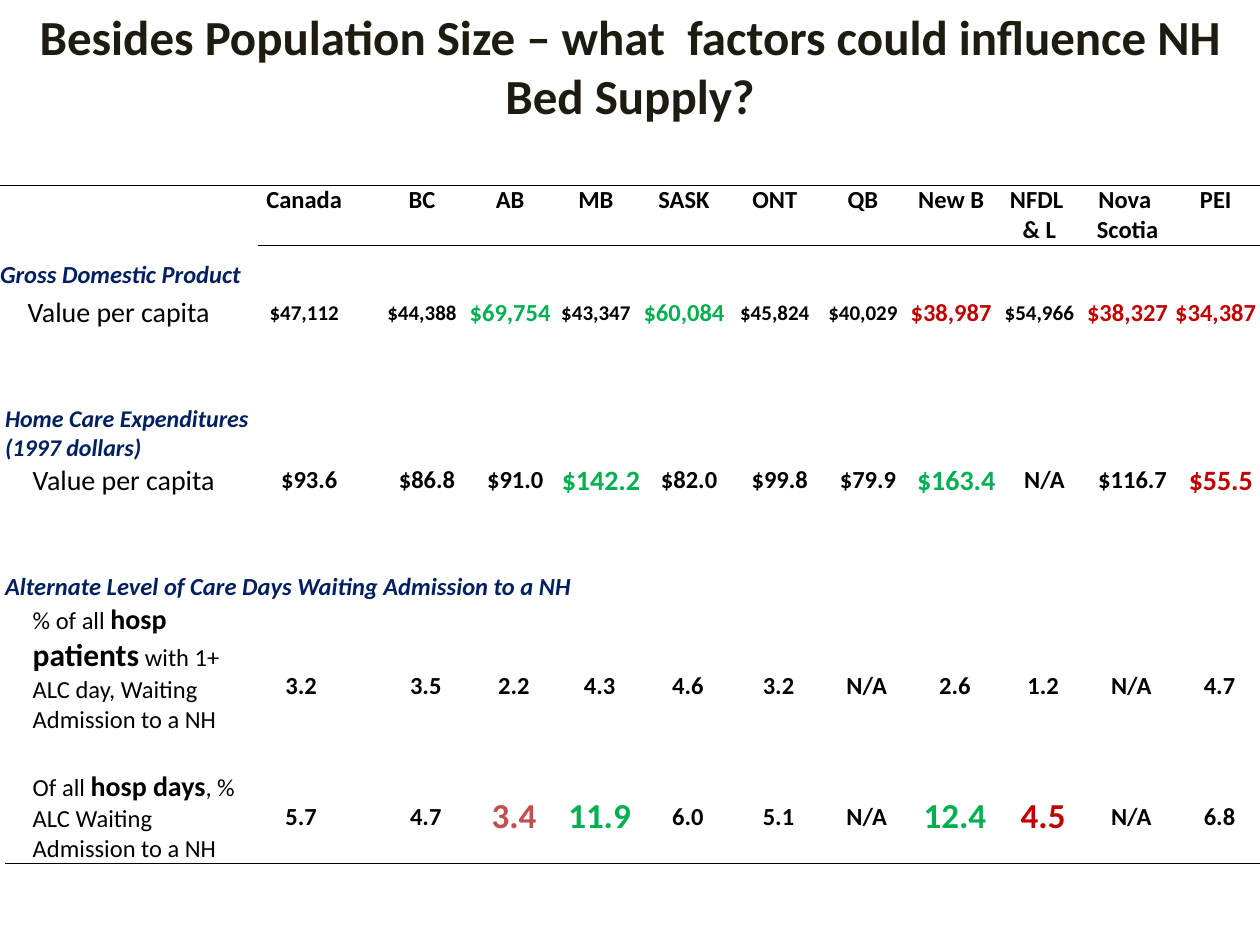
from lxml import etree
from pptx import Presentation
from pptx.dml.color import RGBColor
from pptx.enum import text
from pptx.oxml import ns
from pptx.util import Inches, Pt

FONT = "Calibri"
TITLE_COLOR = RGBColor(0x1E, 0x1C, 0x11)
BLACK = RGBColor(0, 0, 0)
NAVY = RGBColor(0x00, 0x20, 0x60)
GREEN = RGBColor(0x00, 0xB0, 0x50)
RED = RGBColor(0xC0, 0, 0)
SOFT_RED = RGBColor(0xC0, 0x50, 0x4D)

NO_STYLE_NO_GRID = "{2D5ABB26-0587-4C30-8999-92F81FD0307C}"
MIDDLE, BOTTOM = text.MSO_ANCHOR.MIDDLE, text.MSO_ANCHOR.BOTTOM
TOP, CENTER = text.MSO_ANCHOR.TOP, text.PP_ALIGN.CENTER
LEFT = text.PP_ALIGN.LEFT

PROVINCE_WIDTHS = [0.7, 0.7, 0.66, 0.74] + [0.7] * 6
VALUE_COLUMNS = [2] + list(range(4, 14))  # column 3 is a spacer

REGIONS = ["Canada", "BC", "AB", "MB", "SASK", "ONT", "QB", "New B",
           "NFDL \n& L", "Nova \nScotia", "PEI"]
GDP = ["$47,112", "$44,388", ("$69,754", GREEN), "$43,347", ("$60,084", GREEN),
       "$45,824", "$40,029", ("$38,987", RED), "$54,966", ("$38,327", RED),
       ("$34,387", RED)]
HOME_CARE = ["$93.6", "$86.8", "$91.0", ("$142.2", GREEN), "$82.0", "$99.8",
             "$79.9", ("$163.4", GREEN), "N/A", "$116.7", ("$55.5", RED)]
ALC_PATIENTS = ["3.2", "3.5", "2.2", "4.3", "4.6", "3.2", "N/A", "2.6", "1.2",
                "N/A", "4.7"]
ALC_DAYS = ["5.7", "4.7", ("3.4", SOFT_RED), ("11.9", GREEN), "6.0", "5.1",
            "N/A", ("12.4", GREEN), ("4.5", RED), "N/A", "6.8"]


def add_text(paragraph, words, color=BLACK, **formats):
    run = paragraph.add_run()
    run.text = words
    run.font.color.rgb = color
    for name, value in {"name": FONT, **formats}.items():
        setattr(run.font, name, value)


def add_title(slide, left, top, width, height):
    title = slide.shapes.title
    box = {"left": left, "top": top, "width": width, "height": height}
    for name, value in box.items():
        setattr(title, name, Inches(value))
    title.text_frame.vertical_anchor = MIDDLE
    paragraph = title.text_frame.paragraphs[0]
    paragraph.alignment = CENTER
    add_text(paragraph,
             "Besides Population Size – what  factors could influence NH Bed Supply?",
             TITLE_COLOR, size=Pt(28), bold=True)


def add_plain_table(slide, left, top, label_widths, row_heights):
    """Add a table without style, margins or minimum heights for empty cells."""
    widths = [0.22, *label_widths, 0.22, *PROVINCE_WIDTHS]
    table = slide.shapes.add_table(
        len(row_heights), len(widths), Inches(left), Inches(top),
        Inches(sum(widths)), Inches(sum(row_heights))).table
    table.first_row = table.horz_banding = False
    table._tbl.tblPr.find(ns.qn("a:tableStyleId")).text = NO_STYLE_NO_GRID
    for column, width in zip(table.columns, widths):
        column.width = Inches(width)
    for row, height in zip(table.rows, row_heights):
        row.height = Inches(height)
    for cell in table.iter_cells():
        cell.fill.background()
        for side in ("left", "right", "top", "bottom"):
            setattr(cell, f"margin_{side}", 0)
        etree.SubElement(cell.text_frame.paragraphs[0]._p,
                         ns.qn("a:endParaRPr"), sz="100")
    return table


def add_rule(table, row, side, first_column=0):
    """Draw a thin black line on one side ("T" or "B") of a row."""
    for column in range(first_column, len(table.columns)):
        properties = table.cell(row, column)._tc.get_or_add_tcPr()
        line = etree.Element(ns.qn(f"a:ln{side}"), w=str(Pt(0.5)))
        fill = etree.SubElement(line, ns.qn("a:solidFill"))
        etree.SubElement(fill, ns.qn("a:srgbClr"), val=str(BLACK))
        properties.insert(0, line)


def fill_heading(table, words, last_row, last_column, size=14):
    cell = table.cell(*((1, 0) if words == "Gross Domestic Product" else (0, 0)))
    cell.merge(table.cell(last_row, last_column))
    cell.vertical_anchor = BOTTOM
    add_text(cell.text_frame.paragraphs[0], words, NAVY,
             size=Pt(size), bold=True, italic=True)


def fill_label(table, row, runs, anchor=MIDDLE):
    """Write a row label from (words, size, bold) runs."""
    cell = table.cell(row, 1)
    cell.vertical_anchor = anchor
    paragraph = cell.text_frame.paragraphs[0]
    paragraph.alignment = LEFT
    for words, size, bold in runs:
        add_text(paragraph, words, size=Pt(size), bold=bold)


def fill_values(table, row, values, size, accent_size=None, anchor=MIDDLE,
                row_span=1):
    """Write one value per region; (value, color) pairs get the accent size."""
    for column, value in zip(VALUE_COLUMNS, values):
        cell = table.cell(row, column)
        if row_span > 1:
            cell.merge(table.cell(row + row_span - 1, column))
        cell.vertical_anchor = anchor
        accented = isinstance(value, tuple)
        words, color = value if accented else (value, BLACK)
        for index, line in enumerate(words.split("\n")):
            frame = cell.text_frame
            paragraph = frame.add_paragraph() if index else frame.paragraphs[0]
            paragraph.alignment = CENTER
            add_text(paragraph, line, color, bold=True,
                     size=Pt(accent_size if accented else size))


def add_gdp_table(slide, left, top):
    table = add_plain_table(slide, left, top, [1.83, 0.73], [0.47, 0.36, 0.36])
    fill_values(table, 0, REGIONS, 14, anchor=TOP)
    fill_heading(table, "Gross Domestic Product", 1, 1)
    fill_label(table, 2, [("Value per capita", 16, False)])
    fill_values(table, 2, GDP, 12, 14)
    add_rule(table, 0, "B", first_column=2)
    add_rule(table, 0, "T")


def add_home_care_table(slide, left, top):
    table = add_plain_table(slide, left, top, [1.83, 0.73], [0.31, 0.44, 0.26])
    fill_heading(table, "Home Care Expenditures (1997 dollars)", 1, 1, 13.7)
    fill_label(table, 2, [("Value per capita", 16, False)], BOTTOM)
    fill_values(table, 2, HOME_CARE, 14, 16)


def add_alc_table(slide, left, top):
    table = add_plain_table(slide, left, top, [1.71, 0.84],
                            [0.36, 1.05, 0.28, 0.49, 0.23])
    fill_heading(table, "Alternate Level of Care Days Waiting Admission to a NH", 0, 7)
    fill_label(table, 1, [("% of all ", 14, False), ("hosp ", 16, True),
                          ("patients", 18, True),
                          (" with 1+ ALC day, Waiting Admission to a NH", 14, False)])
    fill_values(table, 1, ALC_PATIENTS, 14, row_span=2)
    table.cell(3, 1).merge(table.cell(4, 1))
    fill_label(table, 3, [("Of all ", 14, False), ("hosp days", 16, True),
                          (", % ALC Waiting Admission to a NH", 14, False)], BOTTOM)
    fill_values(table, 3, ALC_DAYS, 14, 20, row_span=2)
    add_rule(table, 3, "B", first_column=1)
    add_rule(table, 4, "B")
    # The spacer and indent columns are not merged, so only row 4 is ruled there.
    spacer = table.cell(3, 3)._tc.tcPr
    spacer.remove(spacer.find(ns.qn("a:lnB")))


def main():
    presentation = Presentation()
    presentation.slide_width, presentation.slide_height = Inches(10), Inches(7.5)
    slide = presentation.slides.add_slide(presentation.slide_layouts[5])
    add_title(slide, 0, 0, 10, 1.04)
    add_gdp_table(slide, 0, 1.47)
    add_home_care_table(slide, 0.04, 2.9)
    add_alc_table(slide, 0.04, 4.42)
    presentation.save("out.pptx")


if __name__ == "__main__":
    main()
